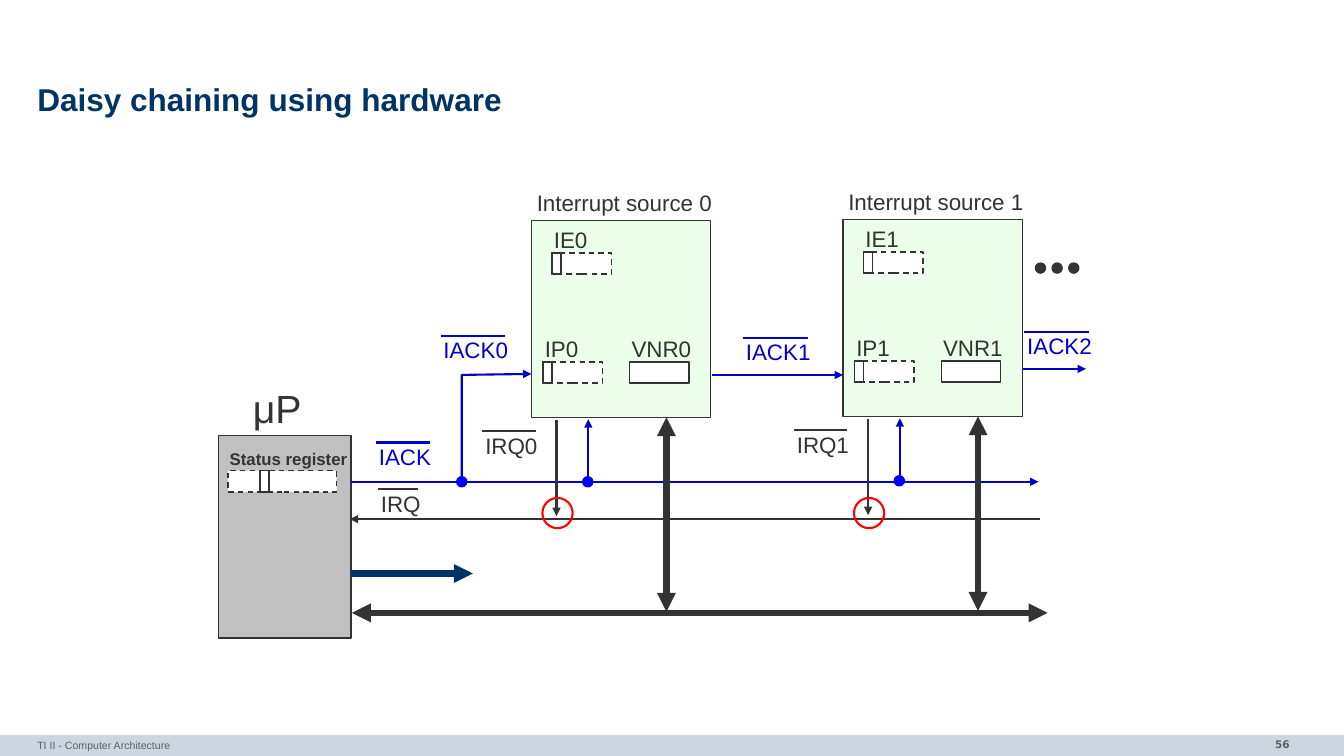
from dataclasses import dataclass

from lxml.etree import SubElement
from pptx import Presentation
from pptx.dml.color import RGBColor
from pptx.enum.dml import MSO_LINE_DASH_STYLE as Dash
from pptx.enum.shapes import MSO_CONNECTOR as Connector, MSO_SHAPE as Preset
from pptx.enum.text import MSO_ANCHOR as Anchor, PP_ALIGN as Align
from pptx.oxml.ns import qn
from pptx.util import Inches, Pt


@dataclass(frozen=True)
class Theme:
    font: str = "Arial"
    number_font: str = "DejaVu Sans"
    ink: str = "333333"
    navy: str = "003366"
    signal: str = "0000CC"
    dot: str = "0000FF"
    ring: str = "FF0000"
    source: str = "EBFFEB"
    processor: str = "C0C0C0"
    register: str = "FFFFFF"
    band: str = "CCD6E0"
    footer: str = "5F5F5F"
    title_size: float = 22.5
    processor_size: float = 28
    label_size: float = 16
    register_size: float = 12
    footer_size: float = 7.5
    thin: float = 1
    wire: float = 1.5
    bus: float = 4.5


THEME = Theme()
COLUMNS, ROWS = 133.3, 75
CELL = Inches(0.1)


def grid(*cells):
    return [round(cell * CELL) for cell in cells]


def apply(target, values):
    for name, value in values.items():
        setattr(target, name, value)


def style_line(line, color, width, dash=None):
    line.color.rgb = RGBColor.from_string(color)
    apply(line, {"width": Pt(width), "dash_style": dash})


def add_arrowheads(shape, ends):
    outline = shape.line._get_or_add_ln()
    for end in ends:
        SubElement(outline, qn(f"a:{end}End"), type="triangle")


def add_text(slide, text, left, top, width, height, color=THEME.ink, size=THEME.label_size,
             bold=False, font=THEME.font, wrap=True, frame_format=None, paragraph_format=None):
    frame = slide.shapes.add_textbox(*grid(left, top, width, height)).text_frame
    apply(frame, {"word_wrap": wrap, **(frame_format or {})})
    paragraph = frame.paragraphs[0]
    apply(paragraph, {"text": text, **(paragraph_format or {})})
    apply(paragraph.font, {"name": font, "size": Pt(size), "bold": bold})
    paragraph.font.color.rgb = RGBColor.from_string(color)


def add_box(slide, left, top, width, height, fill=None, line=None,
            line_width=THEME.thin, dash=None, preset=Preset.RECTANGLE):
    shape = slide.shapes.add_shape(preset, *grid(left, top, width, height))
    shape.shadow.inherit = False
    if fill:
        shape.fill.solid()
        shape.fill.fore_color.rgb = RGBColor.from_string(fill)
    else:
        shape.fill.background()
    if line:
        style_line(shape.line, line, line_width, dash)
    else:
        shape.line.fill.background()


def add_dot(slide, left, top, color=THEME.dot):
    add_box(slide, left, top, 1, 1, color, color, preset=Preset.OVAL)


def add_wire(slide, start, end, color=THEME.ink, width=THEME.wire, ends=()):
    wire = slide.shapes.add_connector(Connector.STRAIGHT, *grid(*start, *end))
    style_line(wire.line, color, width)
    add_arrowheads(wire, ends)
    SubElement(wire._element.spPr, qn("a:effectLst"))


def add_bent_wire(slide, points, color):
    start, *rest = [grid(*point) for point in points]
    builder = slide.shapes.build_freeform(*start)
    builder.add_line_segments(rest, close=False)
    wire = builder.convert_to_shape()
    wire.shadow.inherit = False
    wire.fill.background()
    style_line(wire.line, color, THEME.wire)
    add_arrowheads(wire, ["tail"])


def add_overlined(slide, text, left, top, bar, color=THEME.ink):
    add_text(slide, text, left, top, bar + 3, 3.7, color)
    bar_left, bar_top = left + 0.7, top + 0.4
    add_wire(slide, (bar_left, bar_top), (bar_left + bar, bar_top), color)


def add_register(slide, left, top, width, bit=None):
    dash = None if bit is None else Dash.DASH
    add_box(slide, left, top, width, 2.1, THEME.register, THEME.ink, dash=dash)
    if bit is not None:
        add_box(slide, left + bit, top, 0.9, 2.1, THEME.register, THEME.ink)


def add_processor(slide):
    add_box(slide, 21.7, 43.2, 13.1, 20.1, THEME.processor, THEME.ink)
    add_text(slide, "μP", 24.1, 37.6, 6.8, 5.7, size=THEME.processor_size, wrap=False)
    add_register(slide, 22.6, 46.7, 10.8, bit=3.2)
    add_text(slide, "Status register", 21.8, 44, 13.8, 3,
             size=THEME.register_size, bold=True, wrap=False)


def add_buses(slide):
    add_wire(slide, (34.9, 60.8), (103.9, 60.8), width=THEME.bus, ends=["head", "tail"])
    add_wire(slide, (34.8, 56.9), (46.9, 56.9), THEME.navy, THEME.bus, ["tail"])
    add_wire(slide, (34.8, 47.8), (103, 47.8), THEME.signal, ends=["tail"])
    add_wire(slide, (34.7, 51.5), (103.2, 51.5), ends=["head"])
    add_overlined(slide, "IACK", 36.6, 43.5, 5.3, THEME.signal)
    add_overlined(slide, "IRQ", 36.8, 48.1, 4)


def add_source(slide, number, left, top):
    add_text(slide, f"Interrupt source {number}", left - 0.45, top - 3.6, 20.2, 3.7)
    add_box(slide, left, top, 17.8, 19.5, THEME.source, THEME.ink)
    for name, column, row, width, bit in (
        ("IE", 2.05, 3.2, 5.3, 0), ("IP", 1.15, 14, 5.3, 0), ("VNR", 9.75, 14, 7.9, None),
    ):
        add_register(slide, left + column, top + row, 5.9, bit)
        add_text(slide, f"{name}{number}", left + column - 0.8, top + row - 3.15,
                 width, 3.7, wrap=False)
    add_overlined(slide, f"IRQ{number}", left - 5.55, top + 20.5, 5.3)
    add_wire(slide, (left + 2.5, top + 19.8), (left + 2.5, top + 29.3), ends=["tail"])
    add_wire(slide, (left + 13.4, top + 19.5), (left + 13.4, top + 38.8),
             width=THEME.bus, ends=["head", "tail"])
    add_wire(slide, (left + 5.65, top + 25.8), (left + 5.65, top + 19.7),
             THEME.signal, ends=["tail"])
    add_dot(slide, left + 5.1, top + 25.4)
    add_box(slide, left + 1.1, 49.4, 3, 3, line=THEME.ring,
            line_width=THEME.wire, preset=Preset.OVAL)


def add_acknowledge_chain(slide):
    add_bent_wire(slide, [(45.8, 47.7), (45.8, 37.2), (52.7, 37.1)], THEME.signal)
    add_dot(slide, 45.3, 47.3)
    add_wire(slide, (70.6, 37.2), (83.6, 37.2), THEME.signal, ends=["tail"])
    add_wire(slide, (101.5, 36.6), (107.7, 36.6), THEME.signal, ends=["tail"])
    for number, (left, top) in enumerate([(43, 32.9), (73, 33.1), (100.9, 32.5)]):
        add_overlined(slide, f"IACK{number}", left, top, 6.4, THEME.signal)
    for step in range(3):
        add_dot(slide, 102.7 + 1.65 * step, 26.1, THEME.ink)


def add_frame(slide):
    add_box(slide, 0, 72.9, COLUMNS, 2.1, THEME.band)
    add_text(slide, "56", 111, 72.7, 17.9, 2.6, THEME.footer, THEME.footer_size, True,
             THEME.number_font, paragraph_format={"alignment": Align.RIGHT})
    add_text(slide, "TI II - Computer Architecture", 3.7, 72.8, 87.2, 2.5, THEME.footer,
             THEME.footer_size, frame_format={"margin_left": 0, "margin_right": 0})
    margins = dict.fromkeys(["margin_left", "margin_top", "margin_right", "margin_bottom"], 0)
    add_text(slide, "Daisy chaining using hardware", 3.7, 7.8, 126, 4.7, THEME.navy,
             THEME.title_size, True,
             frame_format={**margins, "vertical_anchor": Anchor.MIDDLE},
             paragraph_format={"line_spacing": 0.85})


def main():
    presentation = Presentation()
    width, height = grid(COLUMNS, ROWS)
    apply(presentation, {"slide_width": width, "slide_height": height})
    slide = presentation.slides.add_slide(presentation.slide_layouts[6])
    add_frame(slide)
    add_processor(slide)
    add_buses(slide)
    for number, (left, top) in enumerate([(52.7, 21.9), (83.6, 21.8)]):
        add_source(slide, number, left, top)
    add_acknowledge_chain(slide)
    presentation.save("out.pptx")


if __name__ == "__main__":
    main()
